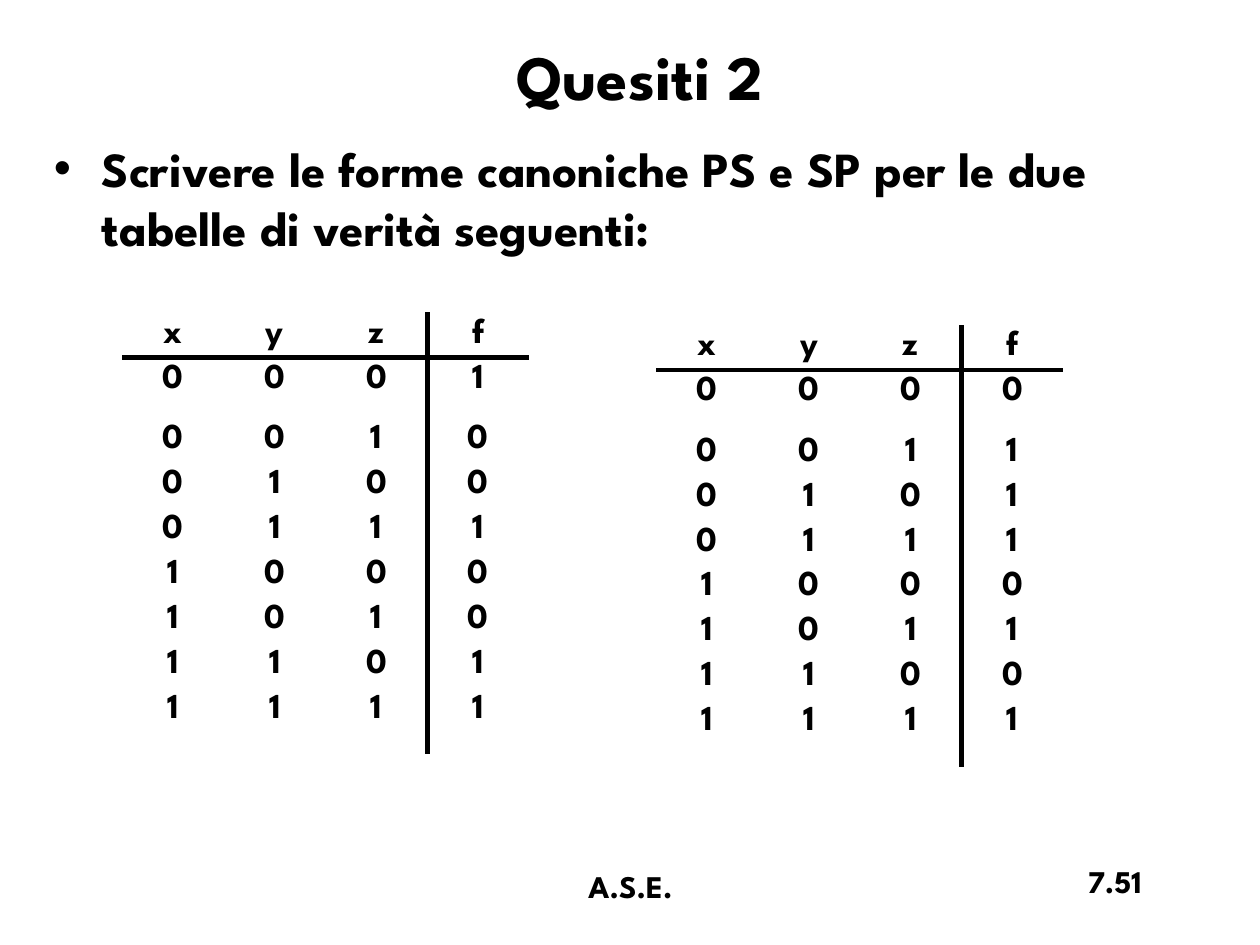
from itertools import product

from lxml.etree import SubElement
from pptx import Presentation
from pptx.dml.color import RGBColor
from pptx.enum.text import MSO_ANCHOR, PP_ALIGN
from pptx.oxml.ns import qn
from pptx.util import Inches, Pt

COLORS = {"ink": "000000", "paper": "FFFFFF"}
FONT = "League Spartan"
RULE_WIDTH = 3

TITLE = "Quesiti 2"
QUESTION = "Scrivere le forme canoniche PS e SP per le due tabelle di verità seguenti:"
FOOTER = "A.S.E."
PAGE = "7.51"

VARIABLES = ["x", "y", "z", "f"]
TRUTH_TABLES = [
    {"left": 0.97, "top": 2.48, "f": "10010011"},
    {"left": 5.21, "top": 2.58, "f": "01110101"},
]
COLUMN_WIDTH = 3.23 / len(VARIABLES)
ROW_HEIGHTS = [0.35, 0.48] + [0.35] * 6 + [0.53]
CELL_BOTTOM = -2


def write(p, text, size, align):
    p.alignment = align
    r = p.add_run()
    r.text = text
    r.font.name = FONT
    r.font.size = Pt(size)
    r.font.bold = True
    r.font.color.rgb = RGBColor.from_string(COLORS["ink"])


def add_text(s, box, text, size, align, anchor=MSO_ANCHOR.TOP):
    tf = s.shapes.add_textbox(*map(Inches, box)).text_frame
    tf.word_wrap = True
    tf.vertical_anchor = anchor
    p = tf.paragraphs[0]
    write(p, text, size, align)
    return p


def add_bullet(p, indent):
    p.space_before = Pt(5.6)
    pPr = p._p.get_or_add_pPr()
    pPr.set("marL", str(Inches(indent)))
    pPr.set("indent", str(-Inches(indent)))
    SubElement(pPr, qn("a:buFont"), typeface="Arial")
    SubElement(pPr, qn("a:buChar"), char="•")


def set_borders(cell, ruled):
    tcPr = cell._tc.get_or_add_tcPr()
    for side in ["L", "R", "T", "B"]:
        width = Pt(RULE_WIDTH) if side in ruled else 0
        line = SubElement(tcPr, qn(f"a:ln{side}"), w=str(width))
        if side in ruled:
            fill = SubElement(line, qn("a:solidFill"))
            SubElement(fill, qn("a:srgbClr"), val=COLORS["ink"])
        else:
            SubElement(line, qn("a:noFill"))


def ruled_sides(row, column):
    f = len(VARIABLES) - 1
    edges = {"L": column == f, "R": column == f - 1, "T": row == 1, "B": row == 0}
    return [side for side, ruled in edges.items() if ruled]


def add_truth_table(s, spec):
    inputs = product("01", repeat=len(VARIABLES) - 1)
    rows = [VARIABLES] + [[*bits, f] for bits, f in zip(inputs, spec["f"])]
    size = (COLUMN_WIDTH * len(VARIABLES), sum(ROW_HEIGHTS))
    table = s.shapes.add_table(
        len(rows), len(VARIABLES),
        *map(Inches, (spec["left"], spec["top"], *size)),
    ).table
    table.first_row = False
    table.horz_banding = False
    for column in table.columns:
        column.width = Inches(COLUMN_WIDTH)
    for i, values in enumerate(rows):
        table.rows[i].height = Inches(ROW_HEIGHTS[i])
        for j, value in enumerate(values):
            cell = table.cell(i, j)
            cell.margin_bottom = Pt(CELL_BOTTOM)
            write(cell.text_frame.paragraphs[0], value, 20, PP_ALIGN.CENTER)
            set_borders(cell, ruled_sides(i, j))
            cell.fill.background()


def main():
    prs = Presentation()
    prs.slide_width, prs.slide_height = Inches(10), Inches(7.5)
    s = prs.slides.add_slide(prs.slide_layouts[6])
    s.background.fill.solid()
    s.background.fill.fore_color.rgb = RGBColor.from_string(COLORS["paper"])

    add_text(s, (0.33, 0.17, 9.5, 0.85), TITLE, 36, PP_ALIGN.CENTER, MSO_ANCHOR.MIDDLE)
    question = add_text(s, (0.33, 1.05, 9.5, 5.61), QUESTION, 28, PP_ALIGN.LEFT)
    add_bullet(question, 0.38)
    for spec in TRUTH_TABLES:
        add_truth_table(s, spec)
    add_text(s, (3.42, 6.83, 3.17, 0.5), FOOTER, 18, PP_ALIGN.CENTER)
    add_text(s, (7.08, 6.79, 2.08, 0.5), PAGE, 18, PP_ALIGN.RIGHT)

    prs.save("out.pptx")


if __name__ == "__main__":
    main()
